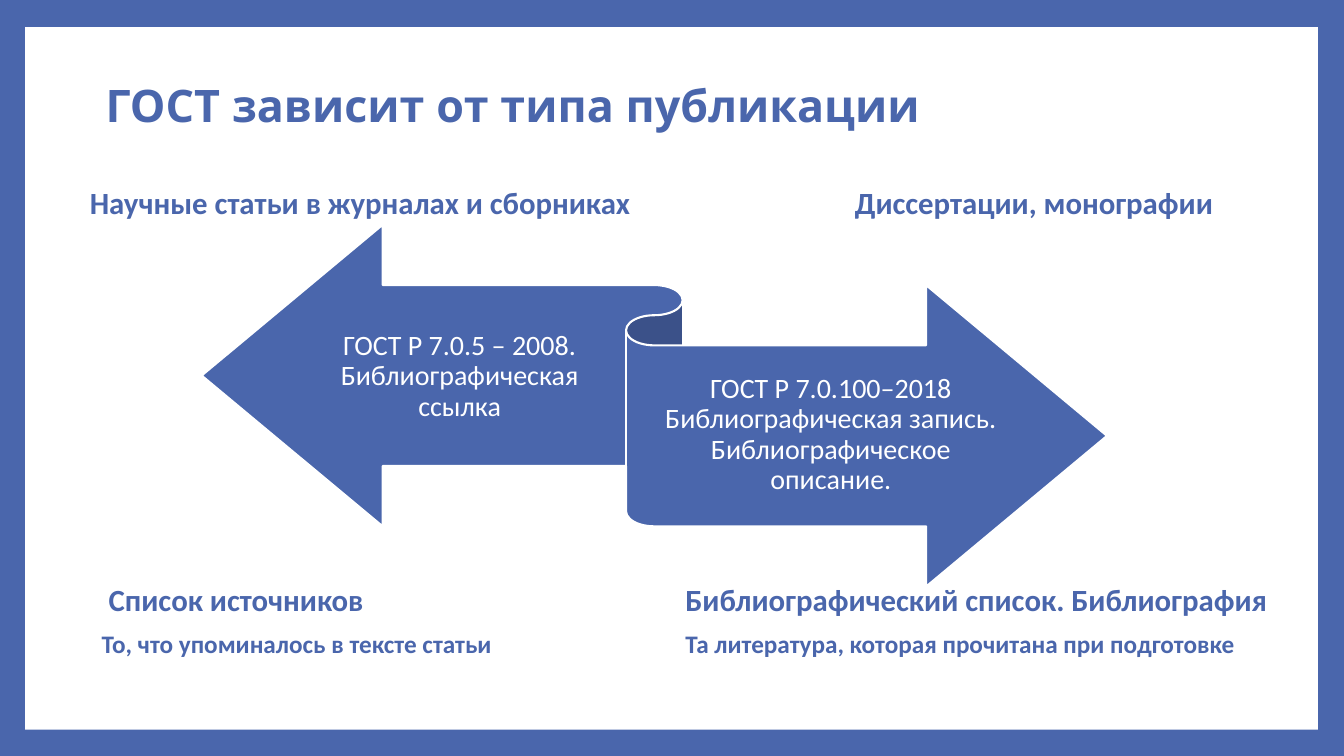
from pptx import Presentation
from pptx import util as u
from pptx.dml import color
from pptx.enum import shapes, text

COLORS = {"blue": "4A66AC", "white": "FFFFFF"}
BODY_FONT = "Calibri"
TITLE_FONT = "League Spartan"
CENTER = text.PP_ALIGN.CENTER
LEFT = text.PP_ALIGN.LEFT
RIGHT = text.PP_ALIGN.RIGHT


def rgb(name):
    return color.RGBColor.from_string(COLORS[name])


def add_text(page, box, words, size, ink="blue", bold=True, font=BODY_FONT,
             align=LEFT, spacing=1.0, middle=False, side=0.1, rim=0.05):
    label = page.shapes.add_textbox(*map(u.Inches, box))
    frame = label.text_frame
    frame.word_wrap = True
    frame.margin_left = frame.margin_right = u.Inches(side)
    frame.margin_top = frame.margin_bottom = u.Inches(rim)
    anchors = text.MSO_ANCHOR
    frame.vertical_anchor = anchors.MIDDLE if middle else anchors.TOP
    para = frame.paragraphs[0]
    para.text = words
    para.alignment = align
    para.line_spacing = spacing
    para.font.name = font
    para.font.size = u.Pt(size)
    para.font.bold = bold
    para.font.color.rgb = rgb(ink)


def add_panel(page, box):
    page.background.fill.solid()
    page.background.fill.fore_color.rgb = rgb("blue")
    panel = page.shapes.add_shape(shapes.MSO_SHAPE.RECTANGLE, *map(u.Inches, box))
    panel.shadow.inherit = False
    panel.fill.solid()
    panel.fill.fore_color.rgb = rgb("white")
    panel.line.fill.background()


def add_headings(page, box):
    left, top, width, height = box
    half = width / 2
    add_text(page, (left, top, half, height),
             "Научные статьи в журналах и сборниках", 22, spacing=0.9, side=0.15)
    add_text(page, (left + half, top, half, height),
             "Диссертации, монографии", 22, align=RIGHT, spacing=0.9)


def add_ribbon(page, box):
    left, top, width, height = box
    ribbon = page.shapes.add_shape(shapes.MSO_SHAPE.LEFT_RIGHT_RIBBON,
                                   *map(u.Inches, box))
    ribbon.shadow.inherit = False
    ribbon.fill.solid()
    ribbon.fill.fore_color.rgb = rgb("blue")
    ribbon.line.color.rgb = rgb("white")
    ribbon.line.width = u.Pt(1.5)
    labels = [
        (0.12, 0.175, 0.33, "ГОСТ Р 7.0.5 – 2008. Библиографическая ссылка"),
        (0.5, 0.336, 0.39, "ГОСТ\u00a0Р 7.0.100–2018 Библиографическая запись. "
                           "Библиографическое описание."),
    ]
    for across, down, share, words in labels:
        label_box = (left + across * width, top + down * height,
                     share * width, 0.49 * height)
        add_text(page, label_box, words, 20, ink="white", bold=False,
                 align=CENTER, spacing=0.9, middle=True, side=0, rim=0.08)


def add_source_list(page, box, name, note, indent=0):
    left, top, width, height = box
    add_text(page, (left + indent, top, width, height), name, 22)
    add_text(page, (left, top + height, width, height), note, 18)


def build_slide(page):
    add_panel(page, (0.25, 0.27, 12.82, 6.97))
    add_text(page, (0.95, 0.67, 11.1, 0.8), "ГОСТ зависит от типа публикации",
             32, font=TITLE_FONT, spacing=0.9, middle=True)
    add_headings(page, (0.74, 1.82, 11.39, 0.47))
    add_ribbon(page, (2, 2.23, 8.98, 3.59))
    add_source_list(page, (0.91, 5.71, 4.33, 0.47), "Список источников",
                    "То, что упоминалось в тексте статьи", indent=0.07)
    add_source_list(page, (6.7, 5.71, 6.23, 0.47),
                    "Библиографический список. Библиография",
                    "Та литература, которая прочитана при подготовке")


def main():
    deck = Presentation()
    deck.slide_width = u.Inches(13.33)
    deck.slide_height = u.Inches(7.5)
    build_slide(deck.slides.add_slide(deck.slide_layouts[6]))
    deck.save("out.pptx")


if __name__ == "__main__":
    main()
